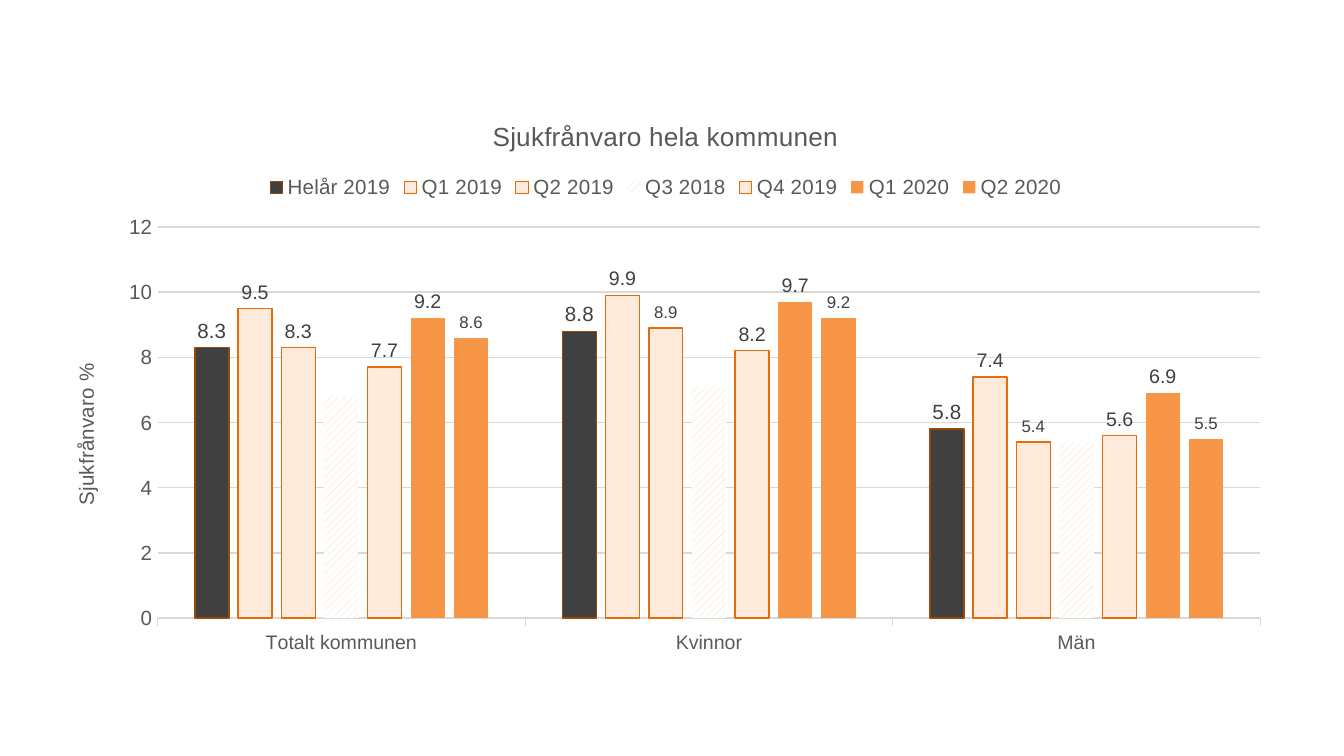
from dataclasses import dataclass
from typing import Optional

from lxml.etree import SubElement
from pptx import Presentation
from pptx.chart.data import CategoryChartData
from pptx.dml.color import RGBColor
from pptx.enum.chart import (XL_CHART_TYPE, XL_LABEL_POSITION,
                             XL_LEGEND_POSITION, XL_TICK_MARK)
from pptx.enum.dml import MSO_PATTERN
from pptx.oxml.ns import qn
from pptx.util import Pt

PX = 9525  # EMU per px, 96 px to the inch
FONT = "Arial"

WHITE = RGBColor(0xFF, 0xFF, 0xFF)
BLACK = RGBColor(0x00, 0x00, 0x00)
CHARCOAL = RGBColor(0x40, 0x40, 0x40)
GREY = RGBColor(0x59, 0x59, 0x59)
LIGHT_GREY = RGBColor(0xD9, 0xD9, 0xD9)
BROWN = RGBColor(0x98, 0x48, 0x07)
ORANGE = RGBColor(0xF7, 0x96, 0x46)
DARK_ORANGE = RGBColor(0xE4, 0x6C, 0x0A)
PEACH = RGBColor(0xFD, 0xEA, 0xDA)
HATCH = RGBColor(0xFC, 0xD5, 0xB5)


@dataclass(frozen=True)
class Period:
    name: str
    values: tuple[float, ...]
    fill: RGBColor
    outline: Optional[RGBColor] = None
    label_size: Optional[float] = None
    first_label_size: Optional[float] = None
    label_format: str = "General"
    hatched: bool = False


CATEGORIES = ("Totalt kommunen", "Kvinnor", "Män")
PERIODS = (
    Period("Helår 2019", (8.3, 8.8, 5.8), CHARCOAL, BROWN, 11),
    Period("Q1 2019", (9.5, 9.9, 7.4), PEACH, DARK_ORANGE, 10.5),
    Period("Q2 2019", (8.3, 8.9, 5.4), PEACH, DARK_ORANGE, 9, first_label_size=10.5),
    Period("Q3 2018", (6.8, 7.1, 5.4), HATCH, hatched=True),
    Period("Q4 2019", (7.7, 8.2, 5.6), PEACH, DARK_ORANGE, 10.5, label_format="0.0"),
    Period("Q1 2020", (9.2, 9.7, 6.9), ORANGE, label_size=10.5, label_format="0.0"),
    Period("Q2 2020", (8.6, 9.2, 5.5), ORANGE, label_size=9, label_format="0.0"),
)


def set_font(font, size: float, color: RGBColor) -> None:
    font.name = FONT
    font.size = Pt(size)
    font.bold = False
    font.color.rgb = color


def set_line(line, color: RGBColor) -> None:
    line.color.rgb = color
    line.width = Pt(0.75)


def add_title_run(text_frame, text: str, size: float) -> None:
    run = text_frame.paragraphs[0].add_run()
    run.text = text
    set_font(run.font, size, GREY)


def format_series(series, period: Period) -> None:
    fill = series.format.fill
    if period.hatched:
        fill.patterned()
        fill.pattern = MSO_PATTERN.WIDE_UPWARD_DIAGONAL
        fill.fore_color.rgb = period.fill
        fill.back_color.rgb = WHITE
    else:
        fill.solid()
        fill.fore_color.rgb = period.fill
    series.invert_if_negative = False

    if period.outline is None:
        series.format.line.fill.background()
    else:
        set_line(series.format.line, period.outline)

    if period.label_size is None:
        return
    labels = series.data_labels
    labels.show_value = True
    labels.position = XL_LABEL_POSITION.OUTSIDE_END
    labels.number_format = period.label_format
    labels.number_format_is_linked = False
    set_font(labels.font, period.label_size, CHARCOAL)
    if period.first_label_size is not None:
        first_label = series.points[0].data_label
        set_font(first_label.font, period.first_label_size, CHARCOAL)
        first_label.position = XL_LABEL_POSITION.OUTSIDE_END


def place_plot_area(chart, x: float, y: float, w: float, h: float) -> None:
    """Fix the inner plot area, in fractions of the chart."""
    plot_area = chart.plots[0]._element.getparent()
    for old_layout in plot_area.findall(qn("c:layout")):
        plot_area.remove(old_layout)
    layout = SubElement(plot_area, qn("c:layout"))
    plot_area.insert(0, layout)
    manual = SubElement(layout, qn("c:manualLayout"))
    settings = {"layoutTarget": "inner", "xMode": "edge", "yMode": "edge",
                "x": x, "y": y, "w": w, "h": h}
    for tag, value in settings.items():
        SubElement(manual, qn(f"c:{tag}")).set("val", str(value))


def format_axes(chart) -> None:
    category_axis = chart.category_axis
    category_axis.major_tick_mark = XL_TICK_MARK.OUTSIDE
    set_font(category_axis.tick_labels.font, 10.5, GREY)
    set_line(category_axis.format.line, LIGHT_GREY)

    value_axis = chart.value_axis
    value_axis.minimum_scale = 0
    value_axis.maximum_scale = 12
    value_axis.major_unit = 2
    value_axis.major_tick_mark = XL_TICK_MARK.NONE
    value_axis.tick_labels.number_format = "General"
    value_axis.tick_labels.number_format_is_linked = False
    set_font(value_axis.tick_labels.font, 11, GREY)
    value_axis.format.line.fill.background()
    set_line(value_axis.major_gridlines.format.line, LIGHT_GREY)

    # Value axis title, reading upwards
    value_axis.has_title = True
    add_title_run(value_axis.axis_title.text_frame, "Sjukfrånvaro %", 11)
    body = value_axis.axis_title._element.find(".//" + qn("a:bodyPr"))
    body.set("rot", "-5400000")
    body.set("vert", "horz")


def add_absence_chart(slide, left: int, top: int, width: int, height: int) -> None:
    data = CategoryChartData()
    data.categories = CATEGORIES
    for period in PERIODS:
        data.add_series(period.name, period.values)
    chart = slide.shapes.add_chart(
        XL_CHART_TYPE.COLUMN_CLUSTERED,
        left * PX, top * PX, width * PX, height * PX, data).chart
    set_font(chart.font, 10, BLACK)

    # Title and legend
    chart.has_title = True
    add_title_run(chart.chart_title.text_frame, "Sjukfrånvaro hela kommunen", 14)
    chart.chart_title.include_in_layout = False
    chart.has_legend = True
    chart.legend.position = XL_LEGEND_POSITION.TOP
    chart.legend.include_in_layout = False
    set_font(chart.legend.font, 11, GREY)

    # Columns
    plot = chart.plots[0]
    plot.gap_width = 219
    plot.overlap = -27
    plot.vary_by_categories = False
    for series, period in zip(plot.series, PERIODS):
        format_series(series, period)

    format_axes(chart)
    place_plot_area(chart, 0.09, 0.23, 0.89, 0.69)


def main() -> None:
    presentation = Presentation()
    presentation.slide_width = 960 * PX
    presentation.slide_height = 540 * PX
    slide = presentation.slides.add_slide(presentation.slide_layouts[6])
    add_absence_chart(slide, 33, 69, 885, 405)
    presentation.save("out.pptx")


if __name__ == "__main__":
    main()
